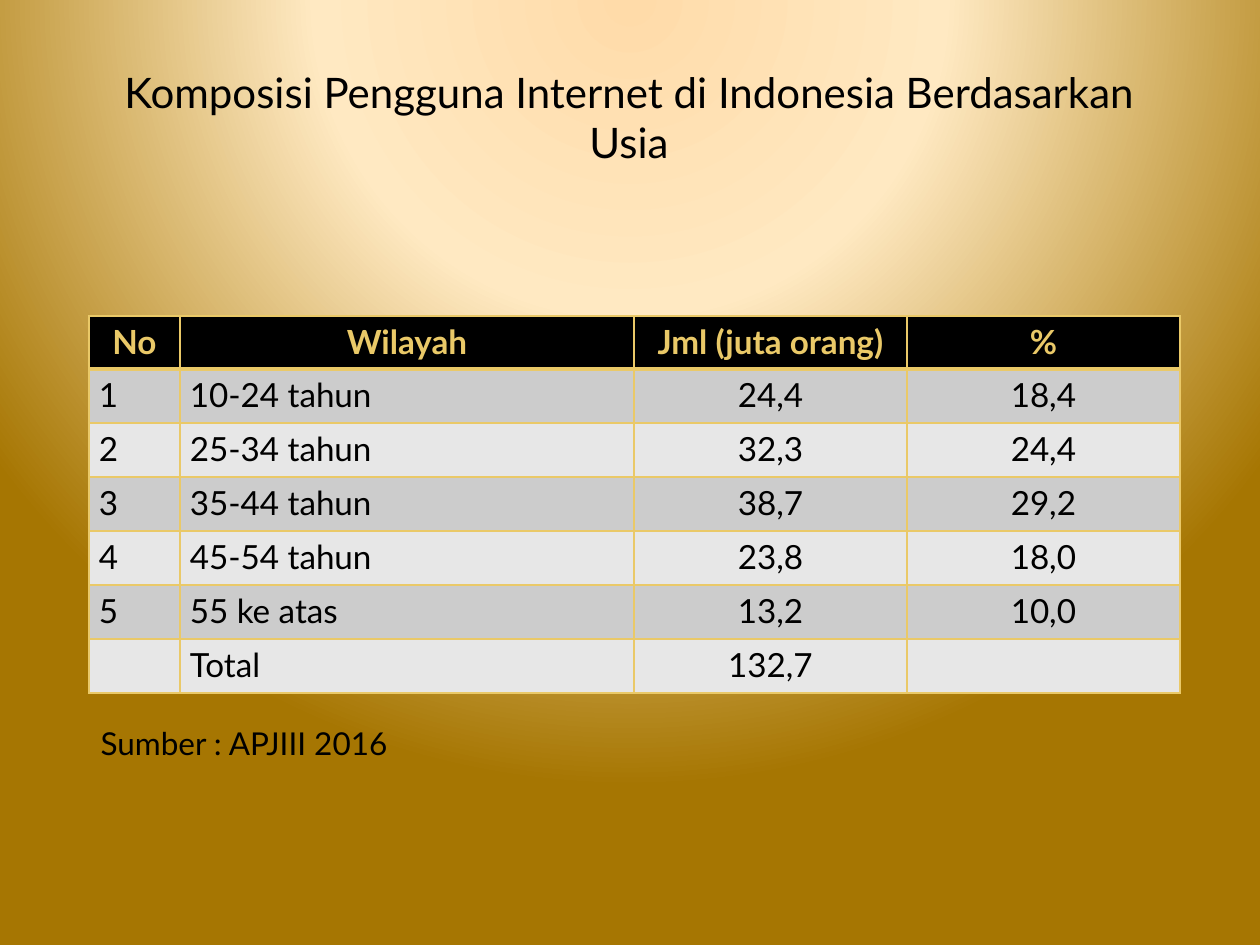
"""Build a slide with a table of internet users by age."""
from dataclasses import dataclass

from pptx import Presentation
from pptx.dml.color import RGBColor
from pptx.enum.text import MSO_ANCHOR, MSO_AUTO_SIZE, PP_ALIGN
from pptx.oxml import parse_xml
from pptx.oxml.ns import nsdecls
from pptx.util import Emu, Pt

LEFT, MID = PP_ALIGN.LEFT, PP_ALIGN.CENTER
CENTRE, TOP = MSO_ANCHOR.MIDDLE, MSO_ANCHOR.TOP
FIXED, GROW = MSO_AUTO_SIZE.NONE, MSO_AUTO_SIZE.SHAPE_TO_FIT_TEXT

TITLE = "Komposisi Pengguna Internet di Indonesia Berdasarkan Usia"
SOURCE = "Sumber : APJIII 2016"
ROWS = [
    ("No", "Wilayah", "Jml (juta orang)", "%"),
    ("1", "10-24 tahun", "24,4", "18,4"),
    ("2", "25-34 tahun", "32,3", "24,4"),
    ("3", "35-44 tahun", "38,7", "29,2"),
    ("4", "45-54 tahun", "23,8", "18,0"),
    ("5", "55 ke atas", "13,2", "10,0"),
    ("", "Total", "132,7", ""),
]
ALIGNS = (LEFT, LEFT, MID, MID)
WIDTHS = (91, 454, 273, 273)
HEAD, BODY = 53, 54
TITLE_BOX = (78, 38, 1102, 158)
TABLE_AT = (89, 316)
SOURCE_BOX = (88, 718, 320, 50)


@dataclass(frozen=True)
class Theme:
    font: str = "Lato"
    ink: str = "000000"
    gold: str = "EAC968"
    bands: tuple = ("E7E7E7", "CCCCCC")
    glow: tuple = ((0, "FFDBA9"), (40, "FFE9C2"), (100, "A67602"))
    title: int = 24
    cell: int = 19
    note: int = 18
    thin: int = 1
    thick: int = 3


THEME = Theme()


def px(n):
    return Emu(round(n * 914400 / 126))


def style(para, size, color, align, bold=False):
    para.alignment = align
    font = para.font
    font.name, font.size, font.bold = THEME.font, Pt(size), bold
    font.color.rgb = RGBColor.from_string(color)


def place(shape, box):
    shape.left, shape.top, shape.width, shape.height = map(px, box)


def paint_back(slide):
    stops = "".join(
        f'<a:gs pos="{at * 1000}"><a:srgbClr val="{color}"/></a:gs>'
        for at, color in THEME.glow)
    slide.element.cSld.insert(0, parse_xml(
        f'<p:bg {nsdecls("p", "a")}><p:bgPr><a:gradFill rotWithShape="1">'
        f'<a:gsLst>{stops}</a:gsLst><a:path path="circle">'
        '<a:fillToRect l="50000" t="-80000" r="50000" b="180000"/></a:path>'
        '</a:gradFill><a:effectLst/></p:bgPr></p:bg>'))


def edge(cell, side, width):
    cell._tc.get_or_add_tcPr().append(parse_xml(
        f'<a:ln{side} {nsdecls("a")} w="{Pt(width)}"><a:solidFill>'
        f'<a:srgbClr val="{THEME.gold}"/></a:solidFill></a:ln{side}>'))


def fill_cell(cell, text, row, align):
    head = row == 0
    heavy = {0: "B", 1: "T"}.get(row)
    for side in "LRTB":
        edge(cell, side, THEME.thick if side == heavy else THEME.thin)
    cell.fill.solid()
    cell.fill.fore_color.rgb = RGBColor.from_string(
        THEME.ink if head else THEME.bands[row % 2])
    cell.margin_left = cell.margin_right = px(10)
    cell.margin_top = cell.margin_bottom = px(6)
    cell.text = text
    style(cell.text_frame.paragraphs[0], THEME.cell,
          THEME.gold if head else THEME.ink, MID if head else align, head)


def add_grid(slide):
    highs = [HEAD] + [BODY] * (len(ROWS) - 1)
    size = (sum(WIDTHS), sum(highs))
    grid = slide.shapes.add_table(
        len(ROWS), len(WIDTHS), *map(px, TABLE_AT + size)).table
    grid.horz_banding = False
    for col, width in zip(grid.columns, WIDTHS):
        col.width = px(width)
    for r, (texts, high) in enumerate(zip(ROWS, highs)):
        grid.rows[r].height = px(high)
        for c, (text, align) in enumerate(zip(texts, ALIGNS)):
            fill_cell(grid.cell(r, c), text, r, align)


def add_title(slide):
    title = slide.shapes.title
    place(title, TITLE_BOX)
    frame = title.text_frame
    frame.text, frame.word_wrap = TITLE, True
    frame.auto_size, frame.vertical_anchor = FIXED, CENTRE
    style(frame.paragraphs[0], THEME.title, THEME.ink, MID)


def add_source(slide):
    note = slide.placeholders[1]
    place(note, SOURCE_BOX)
    frame = note.text_frame
    frame.text, frame.word_wrap = SOURCE, False
    frame.auto_size, frame.vertical_anchor = GROW, TOP
    para = frame.paragraphs[0]
    props = para._p.get_or_add_pPr()
    props.set("marL", "0")
    props.set("indent", "0")
    props.append(parse_xml(f'<a:buNone {nsdecls("a")}/>'))
    para.space_before, para.space_after = Pt(0), Pt(20)
    style(para, THEME.note, THEME.ink, LEFT)


def main():
    deck = Presentation()
    deck.slide_width, deck.slide_height = px(1260), px(945)
    slide = deck.slides.add_slide(deck.slide_layouts[1])
    paint_back(slide)
    add_title(slide)
    add_grid(slide)
    add_source(slide)
    deck.save("out.pptx")


if __name__ == "__main__":
    main()
